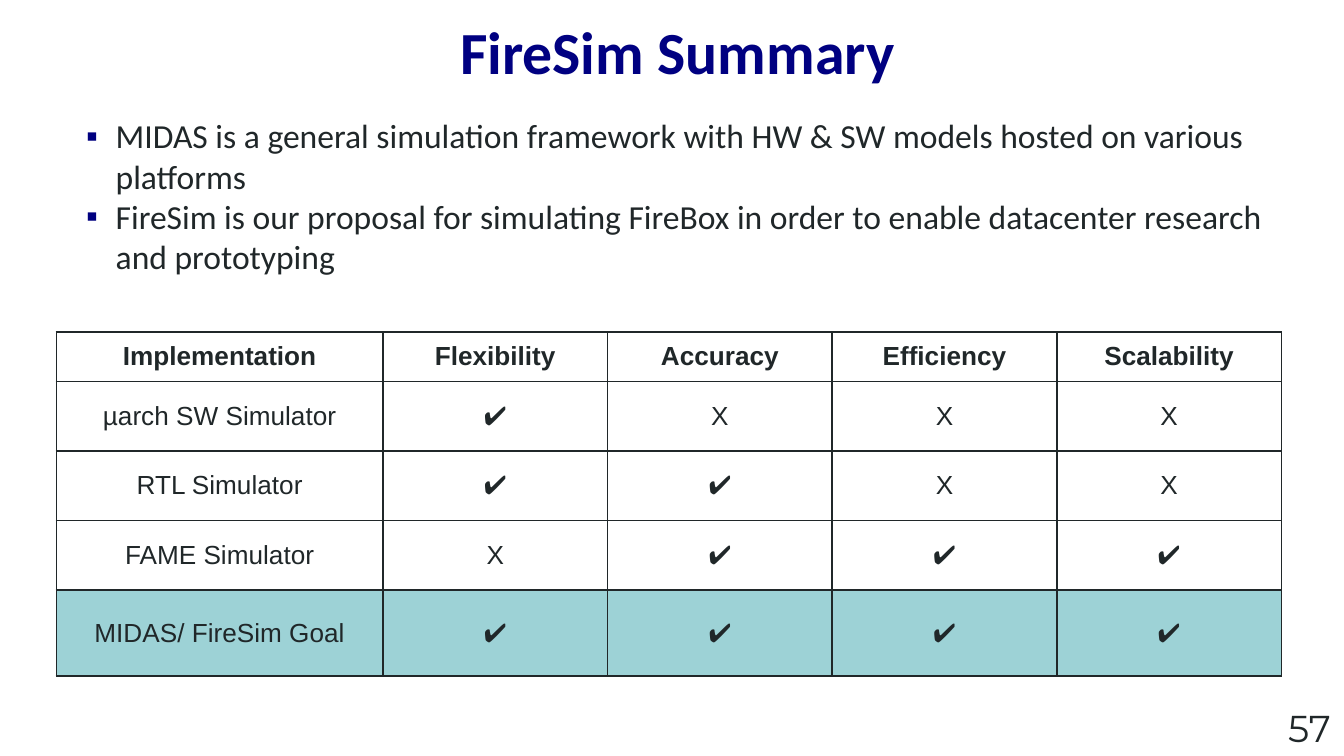
import pptx
import pptx.dml.color
import pptx.enum.text
import pptx.oxml
import pptx.oxml.ns
import pptx.util
from lxml import etree

Pt = pptx.util.Pt
ALIGN = pptx.enum.text.PP_ALIGN
ANCHOR = pptx.enum.text.MSO_ANCHOR
NAVY, INK, TEAL = "000081", "202729", "9DD2D6"
POINTS = [
    "MIDAS is a general simulation framework with HW & SW models hosted on various platforms",
    "FireSim is our proposal for simulating FireBox in order to enable datacenter research and prototyping",
]
HEADS = ["Implementation", "Flexibility", "Accuracy", "Efficiency", "Scalability"]
MARKS = {
    "µarch SW Simulator": "✔XXX",
    "RTL Simulator": "✔✔XX",
    "FAME Simulator": "X✔✔✔",
    "MIDAS/ FireSim Goal": "✔✔✔✔",
}


def color(code):
    return pptx.dml.color.RGBColor.from_string(code)


def node(parent, tag, **attrs):
    return etree.SubElement(parent, pptx.oxml.ns.qn(tag), attrs)


def write(para, text, size, face, code=INK, bold=False):
    run = para.add_run()
    run.text = text
    run.font.size = Pt(size)
    run.font.name = face
    run.font.bold = bold
    run.font.color.rgb = color(code)


def frame(slide, box, anchor):
    text = slide.shapes.add_textbox(*map(Pt, box)).text_frame
    text.word_wrap = True
    text.vertical_anchor = anchor
    return text


def label(slide, box, text, anchor, align, **style):
    para = frame(slide, box, anchor).paragraphs[0]
    para.alignment = align
    write(para, text, **style)


def bullets(slide, box, items):
    body = frame(slide, box, ANCHOR.TOP)
    for num, item in enumerate(items):
        para = body.add_paragraph() if num else body.paragraphs[0]
        props = para._p.get_or_add_pPr()
        props.set("marL", str(Pt(18.9)))
        props.set("indent", str(Pt(-15.8)))
        node(node(props, "a:buClr"), "a:srgbClr", val="000080")
        node(props, "a:buFont", typeface="Arial")
        node(props, "a:buChar", char="▪")
        write(para, item, 18, "Calibri")


def border(cell):
    props = cell._tc.get_or_add_tcPr()
    for side in ("a:lnL", "a:lnR", "a:lnT", "a:lnB"):
        line = node(props, side, w=str(Pt(1)))
        node(node(line, "a:solidFill"), "a:srgbClr", val=INK)


def matrix(slide, box, heads, marks):
    rows = [heads] + [[name, *signs] for name, signs in marks.items()]
    grid = slide.shapes.add_table(len(rows), len(heads), *map(Pt, box)).table
    grid.first_row = grid.horz_banding = False
    first = 175
    rest = (box[2] - first) / (len(heads) - 1)
    for num, col in enumerate(grid.columns):
        col.width = Pt(rest if num else first)
    top, last = 26.6, 46
    step = (box[3] - top - last) / (len(rows) - 2)
    highs = [top] + [step] * (len(rows) - 2) + [last]
    for r, (row, high) in enumerate(zip(rows, highs)):
        grid.rows[r].height = Pt(high)
        for c, text in enumerate(row):
            cell = grid.cell(r, c)
            cell.vertical_anchor = ANCHOR.MIDDLE
            cell.margin_top = cell.margin_bottom = Pt(3)
            border(cell)
            if r == len(rows) - 1:
                cell.fill.solid()
                cell.fill.fore_color.rgb = color(TEAL)
            else:
                cell.fill.background()
            para = cell.text_frame.paragraphs[0]
            para.alignment = ALIGN.CENTER
            write(para, text, 14, "Arial", bold=r == 0)


def main():
    deck = pptx.Presentation()
    deck.slide_width, deck.slide_height = Pt(720), Pt(405)
    slide = deck.slides.add_slide(deck.slide_layouts[6])
    label(slide, (102, 0, 522, 54), "FireSim Summary", ANCHOR.MIDDLE, ALIGN.CENTER,
          size=32, face="Calibri", code=NAVY, bold=True)
    bullets(slide, (36, 58.3, 648, 310), POINTS)
    matrix(slide, (30.2, 177.8, 656.4, 184.4), HEADS, MARKS)
    label(slide, (552, 391, 168, 14.4), "57", ANCHOR.BOTTOM, ALIGN.RIGHT,
          size=20, face="Montserrat")
    deck.save("out.pptx")


if __name__ == "__main__":
    main()
